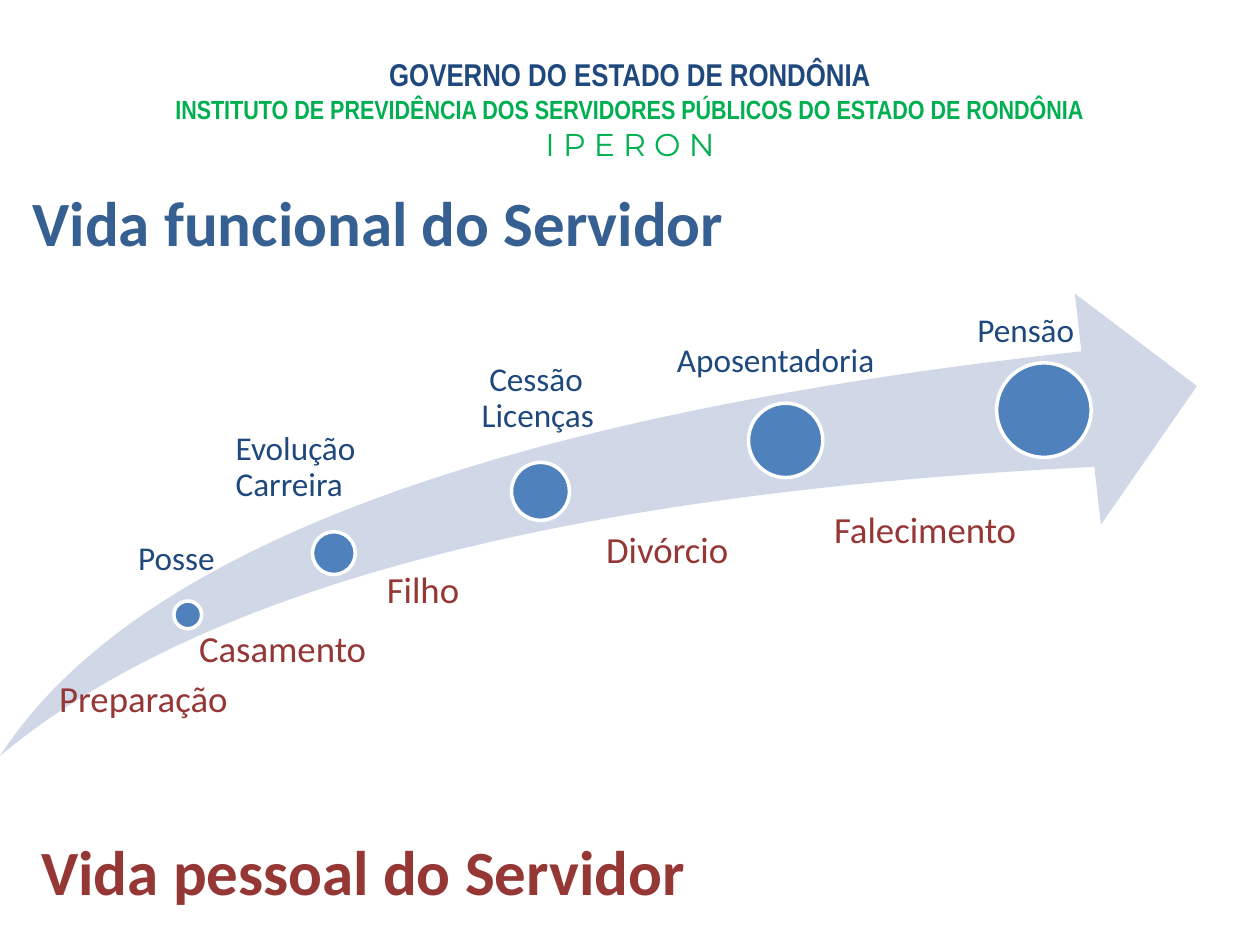
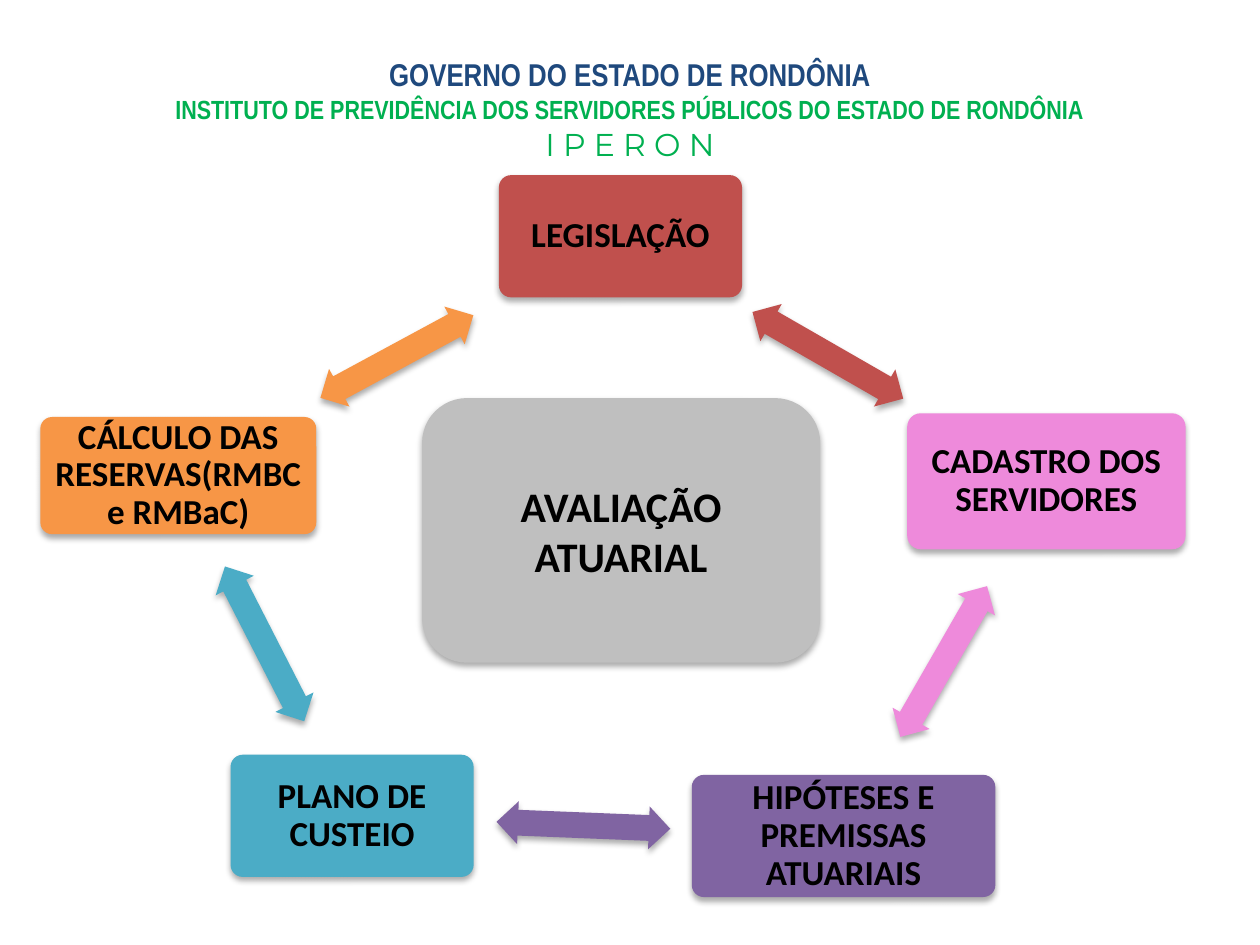
from dataclasses import dataclass

from lxml import etree
from pptx import Presentation
from pptx.dml.color import RGBColor
from pptx.enum.shapes import MSO_SHAPE as Shape
from pptx.enum.text import MSO_ANCHOR as Anchor, PP_ALIGN as Align
from pptx.oxml.ns import qn
from pptx.util import Inches, Pt

SLIDE_WIDTH, SLIDE_HEIGHT = 10, 7.5
CELL = SLIDE_WIDTH / 100  # the grid has 100 columns and 75 rows

NAVY, GREEN, BLUE, WINE = "1F497D", "00B050", "376092", "953735"
DOT_BLUE, SWOOSH_BLUE, GREY = "4F81BD", "D0D8E8", "BFBFBF"
RED, PINK, PURPLE = "C0504D", "EE8ADB", "8064A2"
TEAL, ORANGE = "4BACC6", "F79646"
BLACK, WHITE = "000000", "FFFFFF"
NO_INSETS = (0, 0, 0, 0)
TEXT_INSETS = (1, 0.5, 1, 0.5)


@dataclass
class Box:
    """A rectangle measured in grid cells."""
    left: float
    top: float
    width: float
    height: float

    def inside(self, left, top, width, height):
        return Box(self.left + left, self.top + top, width, height)

    def lengths(self):
        return [cells(n) for n in (self.left, self.top, self.width, self.height)]


def cells(count):
    return Inches(count * CELL)


def color(hex_string):
    return RGBColor.from_string(hex_string)


def style(para, size, hex_string, font="Calibri", bold=False):
    para.font.name = font
    para.font.size = Pt(size)
    para.font.bold = bold
    para.font.color.rgb = color(hex_string)


def set_insets(frame, insets):
    frame.word_wrap = True
    (frame.margin_left, frame.margin_top,
     frame.margin_right, frame.margin_bottom) = map(cells, insets)


def add_text(page, box, text, size, hex_string, insets=NO_INSETS, bold=False,
             spacing=0.9, indent=0):
    frame = page.shapes.add_textbox(*box.lengths()).text_frame
    set_insets(frame, insets)
    para = frame.paragraphs[0]
    para.text = text
    para.line_spacing = spacing
    if indent:
        para._p.get_or_add_pPr().set("indent", str(cells(indent)))
    style(para, size, hex_string, bold=bold)


def add_flat_shape(page, kind, box, fill, *adjustments):
    shape = page.shapes.add_shape(kind, *box.lengths())
    shape.shadow.inherit = False
    shape.fill.solid()
    shape.fill.fore_color.rgb = color(fill)
    shape.line.fill.background()
    for index, value in enumerate(adjustments):
        shape.adjustments[index] = value
    return shape


def add_soft_shadow(shape):
    effects = shape._element.spPr.find(qn("a:effectLst"))
    shadow = etree.SubElement(
        effects, qn("a:outerShdw"), blurRad=str(Pt(3.5)), dist=str(Pt(2.2)),
        dir="5400000", rotWithShape="0")
    tint = etree.SubElement(shadow, qn("a:srgbClr"), val=BLACK)
    etree.SubElement(tint, qn("a:alpha"), val="32000")


def add_header(page, box):
    frame = page.shapes.add_textbox(*box.lengths()).text_frame
    set_insets(frame, TEXT_INSETS)
    lines = [
        ("GOVERNO DO ESTADO DE RONDÔNIA", 18, NAVY, "Arial Narrow", True),
        ("INSTITUTO DE PREVIDÊNCIA DOS SERVIDORES PÚBLICOS DO ESTADO DE RONDÔNIA",
         15, GREEN, "Arial Narrow", True),
        ("I P E R O N", 18, GREEN, "Montserrat", False),
    ]
    for index, (text, *look) in enumerate(lines):
        para = frame.add_paragraph() if index else frame.paragraphs[0]
        para.text = text
        para.alignment = Align.CENTER
        style(para, *look)


def add_heading(page, box, text, hex_string):
    add_text(page, box, text, 36, hex_string, TEXT_INSETS, bold=True, spacing=1)


def add_career_path(page, box):
    """Swoosh arrow with career milestones on it."""
    add_flat_shape(page, Shape.SWOOSH_ARROW, box, SWOOSH_BLUE, 0.25, 0.25)
    # text, first-line indent, dot (left, top, diameter), label place
    milestones = [
        ("Posse", 0, (13.8, 24.4, 2.2), (9.8, 19.7, 10.9, 4.7)),
        ("Evolução Carreira", 0, (24.8, 18.9, 3.4), (16.9, 11, 15.9, 6.5)),
        ("Cessão Licenças", 0.6, (40.6, 13.4, 4.6), (35.8, 5.5, 18.4, 6.3)),
        ("Aposentadoria", 0.6, (59.4, 8.7, 5.9), (50, 4, 23.1, 4.9)),
        ("Pensão", 0, (79.1, 5.5, 7.5), (73.6, 1.6, 19.1, 44)),
    ]
    for text, indent, (left, top, diameter), label in milestones:
        dot = add_flat_shape(page, Shape.OVAL,
                             box.inside(left, top, diameter, diameter), DOT_BLUE)
        dot.line.color.rgb = color(WHITE)
        dot.line.width = Pt(2)
        add_text(page, box.inside(*label), text, 19, NAVY,
                 insets=(0.53 * diameter, 0, 0, 0), indent=indent)


def add_personal_events(page, box):
    events = [
        ("Filho", 29.5, 22.1, 15.4),
        ("Divórcio", 46.9, 18.9, 13.8),
        ("Casamento", 14.6, 26.8, 15.4),
        ("Preparação", 3.5, 30.7, 15.4),
        ("Falecimento", 65, 17.3, 17.3),
    ]
    for text, left, top, width in events:
        add_text(page, box.inside(left, top, width, 4.8), text, 21, WINE,
                 insets=(1.2, 0, 0, 0))


def add_card(page, box, text, fill, size, corner, insets, spacing):
    card = add_flat_shape(page, Shape.ROUNDED_RECTANGLE, box, fill, corner)
    add_soft_shadow(card)
    frame = card.text_frame
    set_insets(frame, insets)
    frame.vertical_anchor = Anchor.MIDDLE
    para = frame.paragraphs[0]
    para.text = text
    para.alignment = Align.CENTER
    para.line_spacing = spacing
    style(para, size, BLACK, bold=True)


def add_valuation_cycle(page, box):
    """Five cards in a ring, each with an arrow to the next, and a core card."""
    # text, colour, card place, arrow (left, top, rotation)
    steps = [
        ("LEGISLAÇÃO", RED, (36.4, 0, 19.3, 9.7), (55.6, 12.6, 29.9)),
        ("CADASTRO DOS SERVIDORES", PINK, (68.8, 18.9, 22.1, 10.8),
         (64.8, 36.9, 119.9)),
        ("HIPÓTESES E PREMISSAS ATUARIAIS", PURPLE, (51.7, 47.6, 24.1, 9.7),
         (36.2, 49.9, 182.3)),
        ("PLANO DE CUSTEIO", TEAL, (15.1, 46, 19.3, 9.7), (10.9, 35.5, 242.9)),
        ("CÁLCULO DAS RESERVAS(RMBC e RMBaC)", ORANGE, (0, 19.2, 21.9, 9.3),
         (21.4, 12.7, 331.6)),
    ]
    for text, fill, place, (left, top, rotation) in steps:
        add_card(page, box.inside(*place), text, fill, 20, 0.1, [0.8] * 4, 0.9)
        arrow = add_flat_shape(page, Shape.LEFT_RIGHT_ARROW,
                               box.inside(left, top, 13.8, 3.4), fill, 0.6, 0.5)
        arrow.rotation = rotation
        add_soft_shadow(arrow)
    add_card(page, box.inside(30.3, 17.7, 31.6, 21), "AVALIAÇÃO ATUARIAL",
             GREY, 24, 0.17, TEXT_INSETS, 1)


def add_page(deck):
    page = deck.slides.add_slide(deck.slide_layouts[6])
    add_header(page, Box(7.8, 3.9, 84.4, 9.8))
    return page


def build_life_page(deck):
    page = add_page(deck)
    swoosh_box = Box(0, 23.3, 95, 36.7)
    add_career_path(page, swoosh_box)
    add_personal_events(page, swoosh_box)
    add_heading(page, Box(1.6, 14.1, 60.6, 7.1), "Vida funcional do Servidor", BLUE)
    add_heading(page, Box(2.3, 65.6, 60.6, 7.1), "Vida pessoal do Servidor", WINE)


def build_cycle_page(deck):
    add_valuation_cycle(add_page(deck), Box(3.2, 13.9, 90.9, 57.3))


def main():
    deck = Presentation()
    deck.slide_width, deck.slide_height = Inches(SLIDE_WIDTH), Inches(SLIDE_HEIGHT)
    build_life_page(deck)
    build_cycle_page(deck)
    deck.save("out.pptx")


if __name__ == "__main__":
    main()
